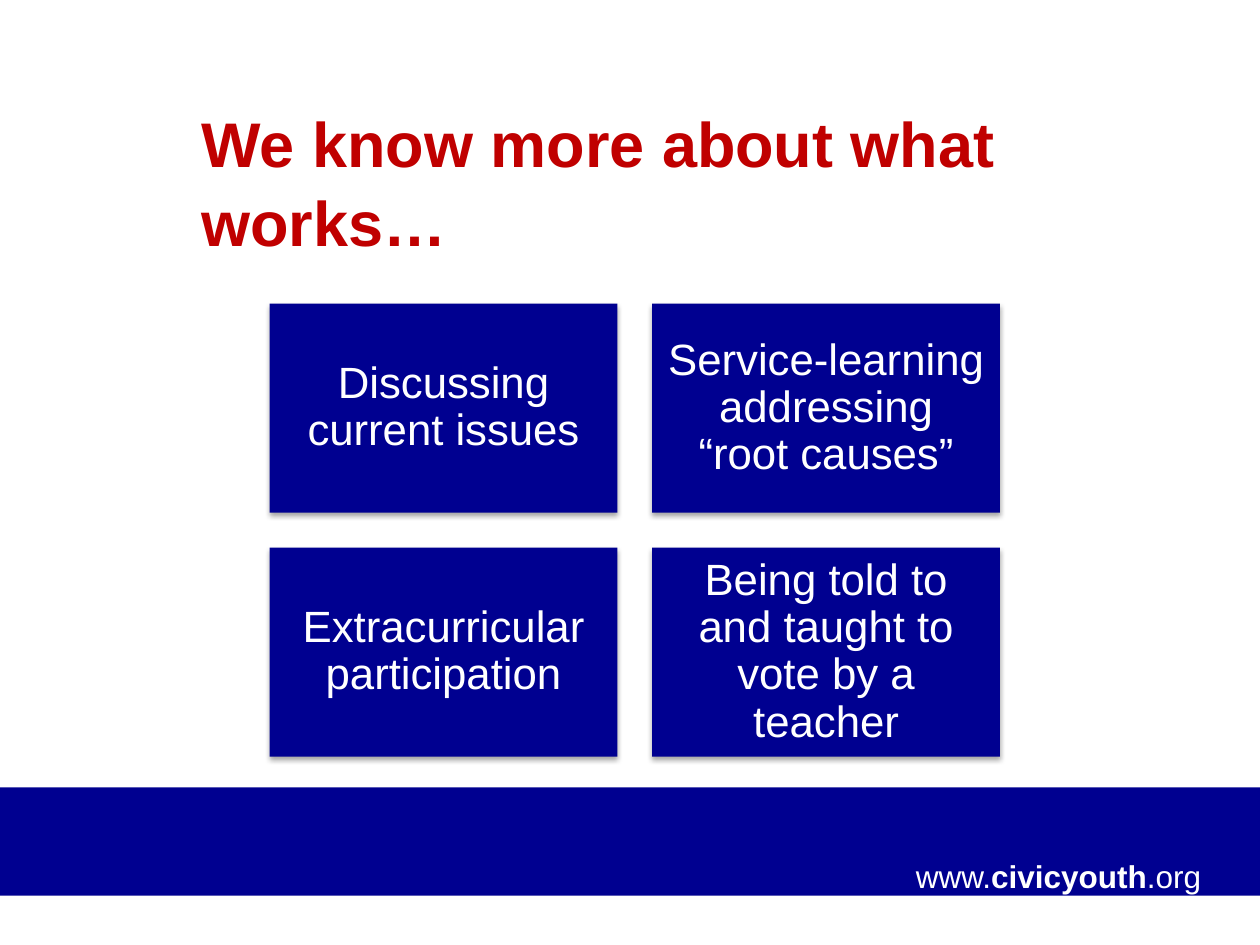
from lxml import etree
from pptx import Presentation
from pptx.dml.color import RGBColor
from pptx.enum.shapes import MSO_SHAPE
from pptx.enum.text import MSO_ANCHOR, MSO_AUTO_SIZE, PP_ALIGN
from pptx.oxml.ns import nsdecls
from pptx.util import Inches, Pt

TITLE = "We know more about what works…"
PRACTICES = [
    "Discussing current issues",
    "Service-learning addressing\v“root causes”",
    "Extracurricular participation",
    "Being told to and taught to vote by a teacher",
]
ADDRESS = [("www.", False), ("civicyouth", True), (".org", False)]

NAVY = RGBColor(0x00, 0x00, 0x90)
RED = RGBColor(0xC0, 0x00, 0x00)
WHITE = RGBColor(0xFF, 0xFF, 0xFF)
RECTANGLE = MSO_SHAPE.RECTANGLE
TOP, MIDDLE = MSO_ANCHOR.TOP, MSO_ANCHOR.MIDDLE
LEFT, CENTER = PP_ALIGN.LEFT, PP_ALIGN.CENTER
GROW, FIXED = MSO_AUTO_SIZE.SHAPE_TO_FIT_TEXT, MSO_AUTO_SIZE.NONE

COLUMNS = 2
GRID_LEFT, GRID_TOP = 2.14, 2.41
CARD_WIDTH, CARD_HEIGHT = 2.76, 1.66
GAP = CARD_WIDTH / 10

SHADOW = (
    f'<a:effectLst {nsdecls("a")}>'
    f'<a:outerShdw blurRad="{Pt(3.1)}" dist="{Pt(1.8)}" dir="5400000" rotWithShape="0">'
    '<a:srgbClr val="000000"><a:alpha val="35000"/></a:srgbClr>'
    '</a:outerShdw></a:effectLst>'
)


def write(shape, spans, size, color, align=LEFT, anchor=TOP, inset=0.05,
          line_spacing=1.0, auto_size=FIXED):
    frame = shape.text_frame
    frame.word_wrap = True
    frame.auto_size = auto_size
    frame.vertical_anchor = anchor
    frame.margin_left = frame.margin_right = Inches(0.1)
    frame.margin_top = frame.margin_bottom = Inches(inset)
    para = frame.paragraphs[0]
    para.alignment = align
    para.line_spacing = line_spacing
    para.space_before = Pt(0)
    for text, bold in spans:
        for index, line in enumerate(text.split("\v")):
            if index:
                para.add_line_break()
            span = para.add_run()
            span.text = line
            span.font.name = "Arial"
            span.font.size = Pt(size)
            span.font.bold = bold
            span.font.color.rgb = color


def add_block(page, left, top, width, height, shadow=False):
    block = page.shapes.add_shape(
        RECTANGLE, Inches(left), Inches(top), Inches(width), Inches(height))
    block.fill.solid()
    block.fill.fore_color.rgb = NAVY
    block.line.fill.background()
    block.shadow.inherit = False
    if shadow:
        properties = block.element.spPr
        empty_effects = properties.find("{*}effectLst")
        properties.replace(empty_effects, etree.fromstring(SHADOW))
    return block


def main():
    deck = Presentation()
    deck.slide_width, deck.slide_height = Inches(10), Inches(7.5)
    page = deck.slides.add_slide(deck.slide_layouts[5])

    add_block(page, 0, 6.25, 10, 0.86)
    address = page.shapes.add_textbox(
        Inches(7.17), Inches(6.75), Inches(2.58), Inches(0.4))
    write(address, ADDRESS, 18, WHITE)

    title = page.shapes.title
    title.left, title.top = Inches(1.5), Inches(0.75)
    title.width, title.height = Inches(8.19), Inches(1.31)
    write(title, [(TITLE, True)], 36, RED, line_spacing=1.05, auto_size=GROW)

    for index, practice in enumerate(PRACTICES):
        row, column = divmod(index, COLUMNS)
        card = add_block(
            page,
            GRID_LEFT + column * (CARD_WIDTH + GAP),
            GRID_TOP + row * (CARD_HEIGHT + GAP),
            CARD_WIDTH, CARD_HEIGHT, shadow=True)
        write(card, [(practice, False)], 25, WHITE, align=CENTER,
              anchor=MIDDLE, inset=0.1, line_spacing=0.9)

    deck.save("out.pptx")


if __name__ == "__main__":
    main()
